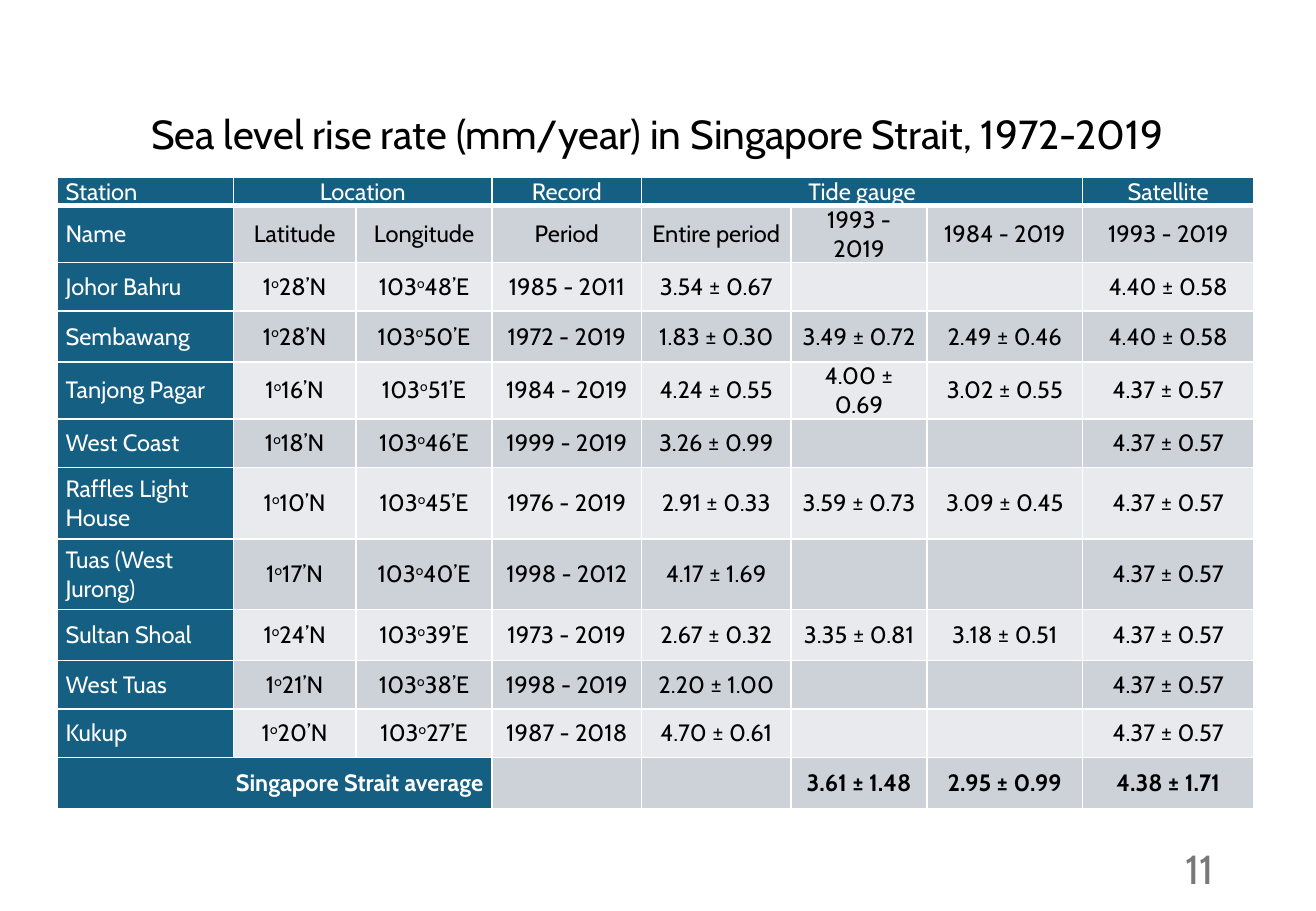
import pptx
import pptx.util
import pptx.dml.color
import pptx.enum.text
import pptx.oxml.ns
import lxml.etree

RGBColor = pptx.dml.color.RGBColor
ALIGN = pptx.enum.text.PP_ALIGN
MIDDLE = pptx.enum.text.MSO_ANCHOR.MIDDLE

PX = 9144
FONT = "Cabin"
BLACK = RGBColor(0x00, 0x00, 0x00)
WHITE = RGBColor(0xFF, 0xFF, 0xFF)
GRAY = RGBColor(0x79, 0x79, 0x79)
BLUE = RGBColor(0x15, 0x60, 0x82)
DARK_BAND = RGBColor(0xCC, 0xD2, 0xD8)
LIGHT_BAND = RGBColor(0xE8, 0xEA, 0xED)

COLUMN_WIDTHS = [145, 101, 112, 123, 123, 112, 128, 141]
ROW_HEIGHTS = [22, 43, 40, 42, 42, 40, 59, 58, 42, 40, 40, 42]
HEADER = ["Station", "Location", "", "Record", "Tide gauge", "", "", "Satellite"]
SUBHEADER = ["Name", "Latitude", "Longitude", "Period", "Entire period",
             "1993 - 2019", "1984 - 2019", "1993 - 2019"]
STATIONS = [
    ("Johor Bahru", 28, 48, "1985 - 2011", "3.54 ± 0.67", "", "", "4.40 ± 0.58"),
    ("Sembawang", 28, 50, "1972 - 2019", "1.83 ± 0.30", "3.49 ± 0.72", "2.49 ± 0.46", "4.40 ± 0.58"),
    ("Tanjong Pagar", 16, 51, "1984 - 2019", "4.24 ± 0.55", "4.00 ± 0.69", "3.02 ± 0.55", "4.37 ± 0.57"),
    ("West Coast", 18, 46, "1999 - 2019", "3.26 ± 0.99", "", "", "4.37 ± 0.57"),
    ("Raffles Light House", 10, 45, "1976 - 2019", "2.91 ± 0.33", "3.59 ± 0.73", "3.09 ± 0.45", "4.37 ± 0.57"),
    ("Tuas (West Jurong)", 17, 40, "1998 - 2012", "4.17 ± 1.69", "", "", "4.37 ± 0.57"),
    ("Sultan Shoal", 24, 39, "1973 - 2019", "2.67 ± 0.32", "3.35 ± 0.81", "3.18 ± 0.51", "4.37 ± 0.57"),
    ("West Tuas", 21, 38, "1998 - 2019", "2.20 ± 1.00", "", "", "4.37 ± 0.57"),
    ("Kukup", 20, 27, "1987 - 2018", "4.70 ± 0.61", "", "", "4.37 ± 0.57"),
]
AVERAGE = ["Singapore Strait average", "", "", "", "",
           "3.61 ± 1.48", "2.95 ± 0.99", "4.38 ± 1.71"]
MERGES = [(0, 1, 2), (0, 4, 6), (11, 0, 2)]


def px(*lengths):
    return [pptx.util.Emu(length * PX) for length in lengths]


def add_run(p, text, size, color, bold, baseline=0):
    r = p.add_run()
    r.text = text
    r.font.name = FONT
    r.font.size = pptx.util.Pt(size)
    r.font.bold = bold
    r.font.color.rgb = color
    if baseline:
        r.font._element.set("baseline", str(baseline))


def write(tf, text, size=14, color=BLACK, bold=False, align=ALIGN.CENTER, line_spacing=None):
    tf.word_wrap = True
    p = tf.paragraphs[0]
    p.alignment = align
    p.line_spacing = line_spacing
    for i, part in enumerate(text.split("^")):
        if i:
            add_run(p, "o", size, color, bold, baseline=30000)
        if part:
            add_run(p, part, size, color, bold)


def add_borders(cell, bottom):
    tcPr = cell._tc.get_or_add_tcPr()
    qn = pptx.oxml.ns.qn
    for side, width in (("L", 1), ("R", 1), ("T", 1), ("B", bottom)):
        ln = lxml.etree.SubElement(tcPr, qn(f"a:ln{side}"), w=str(pptx.util.Pt(width)))
        fill = lxml.etree.SubElement(ln, qn("a:solidFill"))
        lxml.etree.SubElement(fill, qn("a:srgbClr"), val=str(WHITE))


def format_cell(cell, fill, bottom):
    add_borders(cell, bottom)
    cell.fill.solid()
    cell.fill.fore_color.rgb = fill
    cell.vertical_anchor = MIDDLE
    cell.margin_left, cell.margin_right, cell.margin_top, cell.margin_bottom = px(7, 7, 0, 0)


def add_title(s, text):
    sp = s.shapes.title
    sp.left, sp.top, sp.width, sp.height = px(74, 76, 934, 109)
    tf = sp.text_frame
    tf.vertical_anchor = MIDDLE
    tf.margin_bottom = px(41)[0]
    write(tf, text, size=24, line_spacing=0.9)


def add_page_number(s, text):
    tf = s.shapes.add_textbox(*px(765, 695, 244, 40)).text_frame
    tf.vertical_anchor = MIDDLE
    write(tf, text, size=24, color=GRAY, align=ALIGN.RIGHT)


def table_rows():
    stations = [[name, f"1^{lat}’N", f"103^{lon}’E", *rates]
                for name, lat, lon, *rates in STATIONS]
    return [HEADER, SUBHEADER, *stations, AVERAGE]


def add_rate_table(s):
    rows = table_rows()
    last = len(rows) - 1
    table = s.shapes.add_table(len(rows), len(COLUMN_WIDTHS), *px(47, 146, 987, 513)).table
    table.first_row = False
    table.horz_banding = False
    for column, width in zip(table.columns, px(*COLUMN_WIDTHS)):
        column.width = width
    for row, height in zip(table.rows, px(*ROW_HEIGHTS)):
        row.height = height
    for i, first, end in MERGES:
        table.cell(i, first).merge(table.cell(i, end))
    for i, texts in enumerate(rows):
        for j, text in enumerate(texts):
            cell = table.cell(i, j)
            heading = i == 0 or j == 0
            band = DARK_BAND if i % 2 else LIGHT_BAND
            format_cell(cell, BLUE if heading else band, bottom=1 if i else 3)
            align = ALIGN.CENTER
            if j == 0:
                align = ALIGN.RIGHT if i == last else ALIGN.LEFT
            write(cell.text_frame, text, color=WHITE if heading else BLACK,
                  bold=i == last, align=align)


def main():
    prs = pptx.Presentation()
    prs.slide_width, prs.slide_height = px(1083, 750)
    s = prs.slides.add_slide(prs.slide_layouts[5])
    add_title(s, "Sea level rise rate (mm/year) in Singapore Strait, 1972-2019")
    add_page_number(s, "11")
    add_rate_table(s)
    prs.save("out.pptx")


if __name__ == "__main__":
    main()
